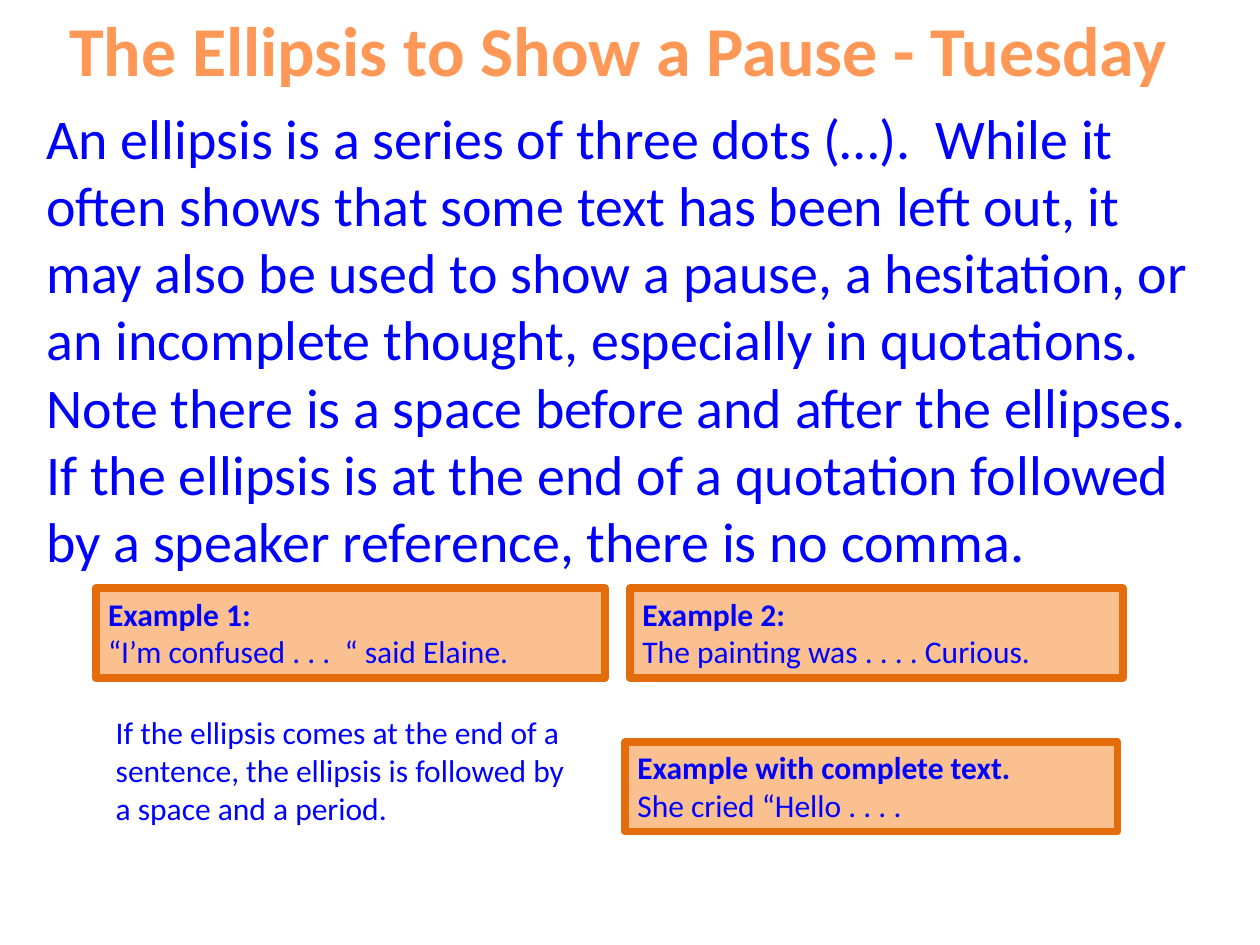
import pptx
import pptx.util
import pptx.dml.color
import pptx.enum.shapes
import pptx.enum.text

Inches, Pt = pptx.util.Inches, pptx.util.Pt
RGBColor = pptx.dml.color.RGBColor
PP_ALIGN = pptx.enum.text.PP_ALIGN
ANCHOR = pptx.enum.text.MSO_ANCHOR

BLUE = RGBColor(0x00, 0x00, 0xFF)
TITLE_ORANGE = RGBColor(0xFF, 0x98, 0x56)
BOX_FILL = RGBColor(0xFA, 0xC0, 0x90)
BOX_LINE = RGBColor(0xE4, 0x6C, 0x0A)

TITLE = "The Ellipsis to Show a Pause - Tuesday"
RULE = (
    "An ellipsis is a series of three dots (…).  While it often shows that some "
    "text has been left out, it may also be used to show a pause, a hesitation, "
    "or an incomplete thought, especially in quotations.  Note there is a space "
    "before and after the ellipses.  If the ellipsis is at the end of a quotation "
    "followed by a speaker reference, there is no comma."
)
NOTE = (
    "If the ellipsis comes at the end of a sentence, the ellipsis is followed by "
    "a space and a period."
)
# left, top, width, heading, sentence
EXAMPLES = [
    (0.76, 4.67, 4.04, "Example 1:", "“I’m confused . . .  “ said Elaine."),
    (5, 4.67, 3.91, "Example 2:", "The painting was . . . . Curious."),
    (4.96, 5.89, 3.91, "Example with complete text.", "She cried “Hello . . . ."),
]
BOX_HEIGHT = 0.71


def style(p, size, color=BLUE, bold=False, align=PP_ALIGN.LEFT):
    p.alignment = align
    p.font.name = "Calibri"
    p.font.size = Pt(size)
    p.font.bold = bold
    p.font.color.rgb = color


def set_frame(tf, anchor):
    tf.word_wrap = True
    tf.auto_size = pptx.enum.text.MSO_AUTO_SIZE.NONE
    tf.vertical_anchor = anchor


def add_title(s, text):
    sp = s.shapes.title
    sp.left, sp.top = Inches(0.08), Inches(0)
    sp.width, sp.height = Inches(9.65), Inches(0.77)
    tf = sp.text_frame
    tf.text = text
    set_frame(tf, ANCHOR.TOP)
    style(tf.paragraphs[0], 40, TITLE_ORANGE, True, PP_ALIGN.CENTER)


def add_text(s, left, top, width, height, text, size):
    sp = s.shapes.add_textbox(Inches(left), Inches(top), Inches(width), Inches(height))
    tf = sp.text_frame
    tf.text = text
    set_frame(tf, ANCHOR.TOP)
    style(tf.paragraphs[0], size)


def add_example(s, left, top, width, heading, sentence):
    sp = s.shapes.add_shape(
        pptx.enum.shapes.MSO_SHAPE.RECTANGLE,
        Inches(left), Inches(top), Inches(width), Inches(BOX_HEIGHT),
    )
    sp.shadow.inherit = False
    sp.fill.solid()
    sp.fill.fore_color.rgb = BOX_FILL
    sp.line.color.rgb = BOX_LINE
    sp.line.width = Pt(4.5)
    tf = sp.text_frame
    set_frame(tf, ANCHOR.TOP)
    tf.text = heading
    style(tf.paragraphs[0], 18, bold=True)
    p = tf.add_paragraph()
    p.text = sentence
    style(p, 18)


def main():
    prs = pptx.Presentation()
    prs.slide_width, prs.slide_height = Inches(10), Inches(7.5)
    s = prs.slides.add_slide(prs.slide_layouts[5])

    # Title and rule
    add_title(s, TITLE)
    add_text(s, 0.27, 0.77, 9.5, 6, RULE, 32)

    # Example boxes
    for example in EXAMPLES:
        add_example(s, *example)

    # Note on sentence endings
    add_text(s, 0.82, 5.61, 3.91, 1.01, NOTE, 18)

    prs.save("out.pptx")


if __name__ == "__main__":
    main()
